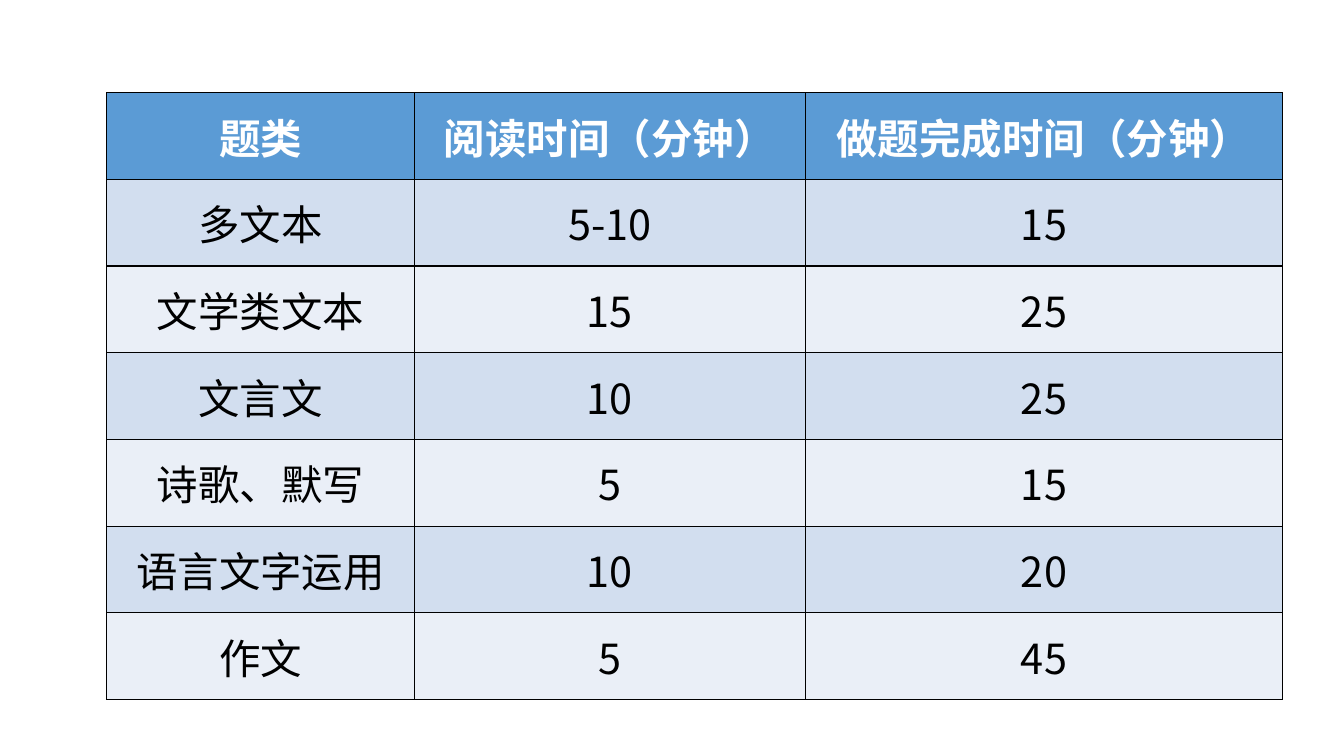
from lxml import etree
from pptx import Presentation
from pptx.dml.color import RGBColor
from pptx.enum.text import MSO_ANCHOR, PP_ALIGN
from pptx.oxml.ns import qn
from pptx.util import Inches, Pt

HEADER_BLUE = RGBColor(0x5B, 0x9B, 0xD5)
BAND_DARK = RGBColor(0xD2, 0xDE, 0xEF)
BAND_LIGHT = RGBColor(0xEA, 0xEF, 0xF7)
WHITE = RGBColor(0xFF, 0xFF, 0xFF)
BLACK = RGBColor(0x00, 0x00, 0x00)
FONT = "Noto Sans CJK SC"
FONT_SIZE = Pt(29.6)

LEFT, TOP = Inches(1.06), Inches(0.92)
COLUMNS = [Inches(w) for w in (3.05, 3.88, 4.73)]
ROW_HEIGHT = Inches(0.86)

TIMES = [
    ("题类", "阅读时间（分钟）", "做题完成时间（分钟）"),
    ("多文本", "5-10", "15"),
    ("文学类文本", "15", "25"),
    ("文言文", "10", "25"),
    ("诗歌、默写", "5", "15"),
    ("语言文字运用", "10", "20"),
    ("作文", "5", "45"),
]


def set_borders(cell, color, width):
    tc_pr = cell._tc.get_or_add_tcPr()
    for side in ("a:lnL", "a:lnR", "a:lnT", "a:lnB"):
        ln = etree.SubElement(tc_pr, qn(side), w=str(width))
        fill = etree.SubElement(ln, qn("a:solidFill"))
        etree.SubElement(fill, qn("a:srgbClr"), val=str(color))


def set_font(r, color, bold):
    r.font.name = FONT
    r.font.size = FONT_SIZE
    r.font.bold = bold
    r.font.color.rgb = color
    etree.SubElement(r.font._element, qn("a:ea"), typeface=FONT)


def fill_cell(cell, text, fill, color, bold):
    set_borders(cell, BLACK, Pt(1))
    cell.fill.solid()
    cell.fill.fore_color.rgb = fill
    cell.vertical_anchor = MSO_ANCHOR.MIDDLE
    p = cell.text_frame.paragraphs[0]
    p.text = text
    p.alignment = PP_ALIGN.CENTER
    set_font(p.runs[0], color, bold)


def row_style(row):
    if row == 0:
        return HEADER_BLUE, WHITE, True
    return (BAND_DARK if row % 2 else BAND_LIGHT), BLACK, False


def add_time_table(slide, rows):
    table = slide.shapes.add_table(
        len(rows), len(COLUMNS), LEFT, TOP, sum(COLUMNS), ROW_HEIGHT * len(rows)
    ).table
    for column, width in zip(table.columns, COLUMNS):
        column.width = width
    for i, texts in enumerate(rows):
        table.rows[i].height = ROW_HEIGHT
        for j, text in enumerate(texts):
            fill_cell(table.cell(i, j), text, *row_style(i))


def main():
    prs = Presentation()
    prs.slide_width, prs.slide_height = Inches(13.33), Inches(7.5)
    slide = prs.slides.add_slide(prs.slide_layouts[6])
    add_time_table(slide, TIMES)
    prs.save("out.pptx")


if __name__ == "__main__":
    main()
